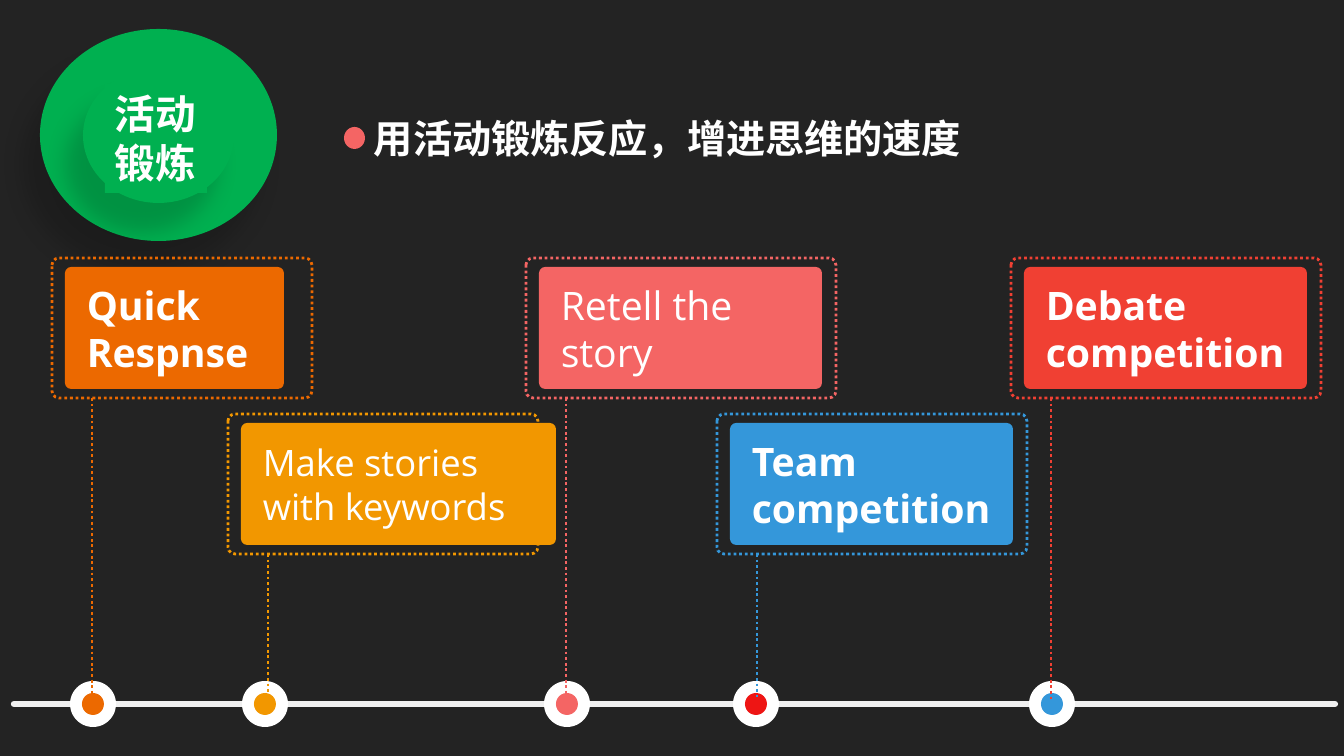
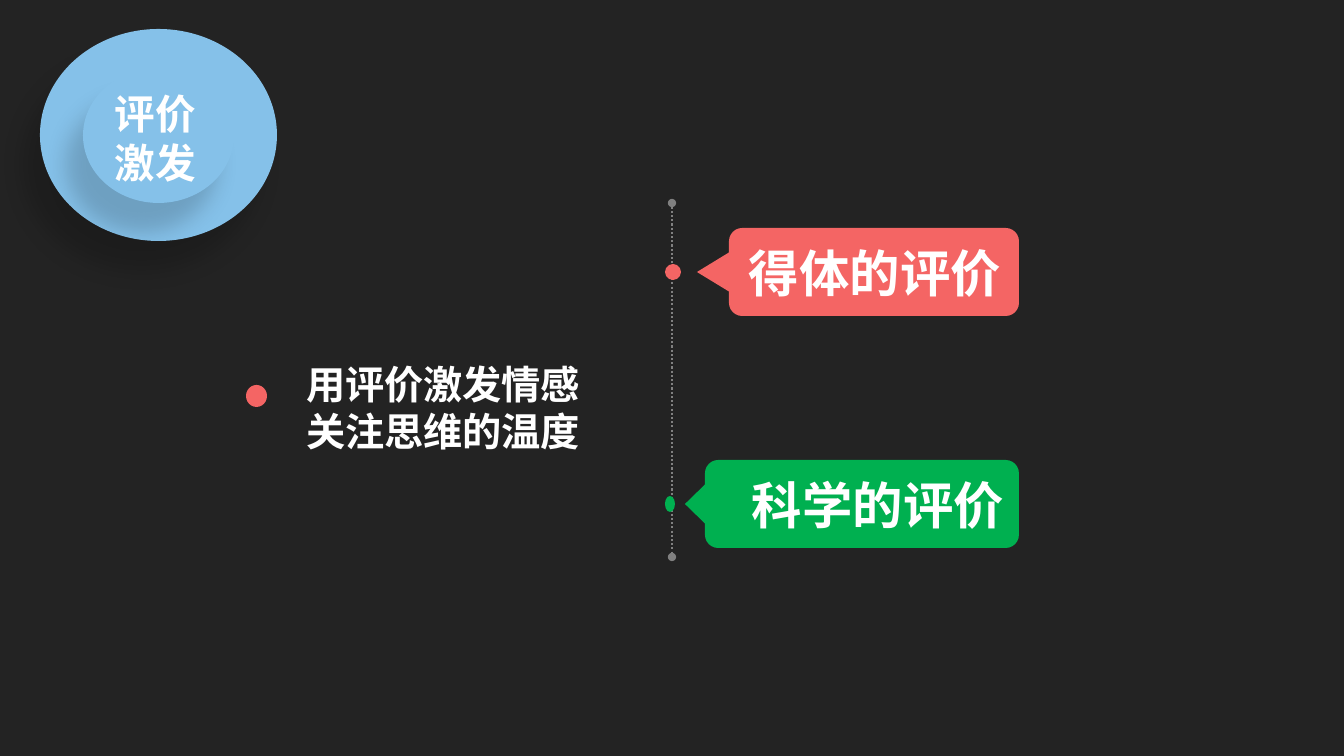
"""Build two dark slides: a timeline of class activities and a pair of evaluation callouts."""
import dataclasses

import lxml.etree
import pptx
import pptx.dml.color
import pptx.enum.dml
import pptx.enum.lang
import pptx.enum.shapes
import pptx.enum.text
import pptx.oxml.ns
import pptx.util


@dataclasses.dataclass(frozen=True)
class Theme:
    font: str = "Open Sans"
    background: str = "232323"
    white: str = "FFFFFF"
    axis: str = "F0F0F0"
    gray: str = "808080"
    green: str = "00B050"
    sky: str = "85C1E9"
    coral: str = "F46564"
    orange: str = "EC6900"
    amber: str = "F29700"
    red: str = "F04033"
    scarlet: str = "EE1514"
    blue: str = "3497DA"
    badge_size: int = 29
    title_size: int = 28
    card_size: int = 28
    small_card_size: int = 26
    callout_size: int = 36


theme = Theme()
SLIDE_WIDTH, SLIDE_HEIGHT = 1344, 756
PX = 12192000 / SLIDE_WIDTH
SHAPE = pptx.enum.shapes.MSO_SHAPE
ANCHOR = pptx.enum.text.MSO_ANCHOR
rgb = pptx.dml.color.RGBColor.from_string
qn = pptx.oxml.ns.qn


def draw(slide, kind, box, fill=None, line=None, width=0, dotted=False, corner=None):
    """Add a preset shape, or a connector along the box when kind is None."""
    left, top, wide, high = [round(length * PX) for length in box]
    if kind is None:
        shape = slide.shapes.add_connector(
            pptx.enum.shapes.MSO_CONNECTOR.STRAIGHT, left, top, left + wide, top + high)
    else:
        shape = slide.shapes.add_shape(kind, left, top, wide, high)
        shape.shadow.inherit = False
        if fill:
            shape.fill.solid()
            shape.fill.fore_color.rgb = rgb(fill)
        else:
            shape.fill.background()
        if corner is not None:
            shape.adjustments[0] = corner
    if line:
        shape.line.color.rgb = rgb(line)
        shape.line.width = pptx.util.Pt(width)
        if dotted:
            shape.line.dash_style = pptx.enum.dml.MSO_LINE.ROUND_DOT
    else:
        shape.line.fill.background()
    if kind is None:
        lxml.etree.SubElement(shape.element.spPr, qn("a:effectLst"))
    return shape


def write(shape, text, size, bold=True, anchor=ANCHOR.TOP, wrap=False, insets=(10, 5, 10, 5)):
    """Fill a shape with white, left-aligned text."""
    frame = shape.text_frame
    frame.text = text
    frame.word_wrap = wrap
    frame.auto_size = pptx.enum.text.MSO_AUTO_SIZE.NONE
    frame.vertical_anchor = anchor
    frame.margin_left, frame.margin_top, frame.margin_right, frame.margin_bottom = [
        round(inset * PX) for inset in insets]
    for paragraph in frame.paragraphs:
        paragraph.alignment = pptx.enum.text.PP_ALIGN.LEFT
        for run in paragraph.runs:
            run.font.size = pptx.util.Pt(size)
            run.font.bold = bold
            run.font.color.rgb = rgb(theme.white)
            run.font.name = theme.font
            run.font.language_id = pptx.enum.lang.MSO_LANGUAGE_ID.SIMPLIFIED_CHINESE
            east_asian = lxml.etree.Element(qn("a:ea"), typeface=theme.font)
            run.font._element.find(qn("a:latin")).addnext(east_asian)


presentation = pptx.Presentation()
presentation.slide_width = round(SLIDE_WIDTH * PX)
presentation.slide_height = round(SLIDE_HEIGHT * PX)
background = presentation.slide_master.background.fill
background.solid()
background.fore_color.rgb = rgb(theme.background)

headers = [
    ("活动\n锻炼", theme.green, theme.green, "用活动锻炼反应，增进思维的速度",
     (364, 109, 611, 57), (344, 127)),
    ("评价\n激发", theme.sky, None, "用评价激发情感\n关注思维的温度",
     (296, 355, 296, 105), (246, 385)),
]
slides = []
for badge_text, badge_color, label_fill, title, title_box, bullet in headers:
    slide = presentation.slides.add_slide(presentation.slide_layouts[5])
    slides.append(slide)
    for disc_box in [(40, 29, 237, 212), (83, 68, 151, 135)]:
        disc = draw(slide, SHAPE.OVAL, disc_box, badge_color)
        shadow = lxml.etree.SubElement(
            disc.element.spPr.find(qn("a:effectLst")), qn("a:outerShdw"),
            blurRad=str(pptx.util.Pt(16)), dist=str(pptx.util.Pt(24)),
            dir=str(120 * 60000), algn="ctr", rotWithShape="0")
        shadow_color = lxml.etree.SubElement(shadow, qn("a:srgbClr"), val="000000")
        lxml.etree.SubElement(shadow_color, qn("a:alpha"), val="17000")
    label = draw(slide, SHAPE.RECTANGLE, (105, 84, 102, 109), label_fill)
    write(label, badge_text, theme.badge_size)
    draw(slide, SHAPE.OVAL, (*bullet, 21, 22), theme.coral)
    heading = slide.shapes.title
    heading.left, heading.top, heading.width, heading.height = [
        round(length * PX) for length in title_box]
    write(heading, title, theme.title_size)

timeline, evaluation = slides

AXIS_Y = 704
axis = draw(timeline, None, (14, AXIS_Y, 1321, 0), line=theme.axis, width=4.5)
axis.element.spPr.find(qn("a:ln")).set("cap", "rnd")
markers = [(93, theme.orange), (265, theme.amber), (567, theme.coral),
           (756, theme.scarlet), (1052, theme.blue)]
for center, color in markers:
    for diameter, fill in [(46, theme.white), (22, color)]:
        draw(timeline, SHAPE.OVAL,
             (center - diameter / 2, AXIS_Y - diameter / 2, diameter, diameter), fill)

UPPER, LOWER = 258, 414
FRAME_HEIGHT, CARD_HEIGHT = 140, 122
stem_ends = {UPPER: 702, LOWER: 697}
cards = [
    ("Quick Respnse", 52, UPPER, 260, 219, theme.orange, theme.card_size, True),
    ("Retell the story", 526, UPPER, 310, 283, theme.coral, theme.card_size, False),
    ("Debate competition", 1011, UPPER, 310, 283, theme.red, theme.card_size, True),
    ("Make stories with keywords", 228, LOWER, 310, 315, theme.amber,
     theme.small_card_size, False),
    ("Team competition", 717, LOWER, 310, 283, theme.blue, theme.card_size, True),
]
for text, left, top, frame_width, card_width, color, size, bold in cards:
    card = draw(timeline, SHAPE.ROUNDED_RECTANGLE,
                (left + 13, top + 9, card_width, CARD_HEIGHT), color, corner=0.05)
    write(card, text, size, bold, ANCHOR.MIDDLE, True, (20, 20, 20, 20))
    stem_top = top + FRAME_HEIGHT
    draw(timeline, None, (left + 40, stem_top, 0, stem_ends[top] - stem_top),
         line=color, width=2, dotted=True)
    draw(timeline, SHAPE.ROUNDED_RECTANGLE, (left, top, frame_width, FRAME_HEIGHT),
         line=color, width=2, dotted=True, corner=0.05)

spine = draw(evaluation, None, (672, 203, 0, 354), line=theme.gray, width=1.5, dotted=True)
for end in ("a:headEnd", "a:tailEnd"):
    lxml.etree.SubElement(spine.element.spPr.find(qn("a:ln")), qn(end), type="oval")

CALLOUT_RIGHT, CALLOUT_HEIGHT, POINTER_BASE, DOT_HEIGHT = 1019, 88, 39, 16
callouts = [
    ("得体的评价", 729, 228, 16, 32, 16, theme.coral),
    ("科学的评价", 705, 460, 43, 20, 10, theme.green),
]
for text, left, top, inset, pointer_length, dot_width, color in callouts:
    middle = top + CALLOUT_HEIGHT / 2
    callout = draw(evaluation, SHAPE.ROUNDED_RECTANGLE,
                   (left, top, CALLOUT_RIGHT - left, CALLOUT_HEIGHT), color, corner=0.15)
    write(callout, text, theme.callout_size, anchor=ANCHOR.MIDDLE, wrap=True,
          insets=(inset, 0, 0, 0))
    pointer = draw(evaluation, SHAPE.ISOSCELES_TRIANGLE,
                   (left - (pointer_length + POINTER_BASE) / 2, middle - pointer_length / 2,
                    POINTER_BASE, pointer_length), color)
    pointer.rotation = 270
    draw(evaluation, SHAPE.OVAL, (665, middle - DOT_HEIGHT / 2, dot_width, DOT_HEIGHT), color)

presentation.save("out.pptx")
